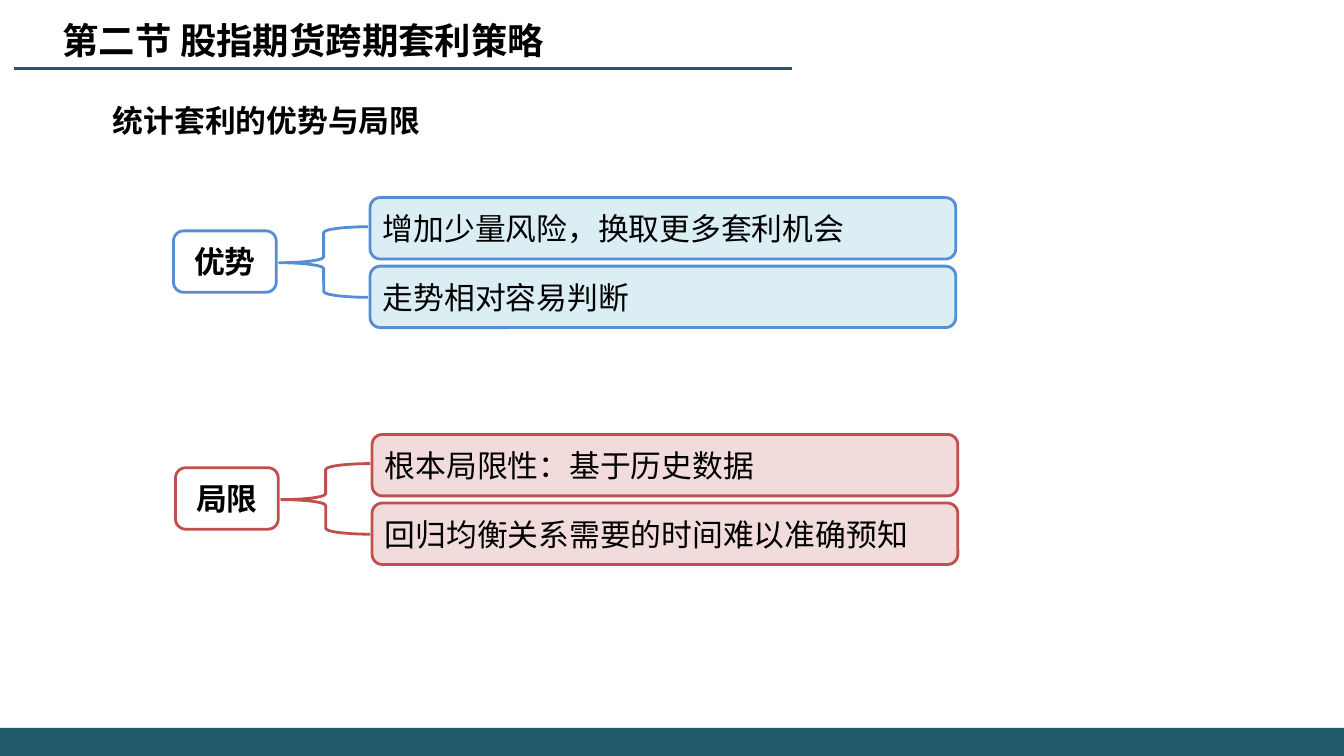
import pptx
import pptx.util
import pptx.dml.color
import pptx.oxml
import pptx.oxml.ns
import pptx.enum.shapes
import pptx.enum.text

Inches = pptx.util.Inches
Shape = pptx.enum.shapes.MSO_SHAPE
Align = pptx.enum.text.PP_ALIGN
Anchor = pptx.enum.text.MSO_ANCHOR

COLORS = {
    "teal": "215968", "black": "000000", "white": "FFFFFF",
    "blue": "558ED5", "pale_blue": "DBEEF4",
    "red": "C0504D", "pale_red": "F2DCDB",
}
CJK_FONT = "Noto Sans CJK SC"


def color(name):
    """Return the named palette colour."""
    return pptx.dml.color.RGBColor.from_string(COLORS[name])


def write(shape, text, size, font, bold=False, align=Align.LEFT, anchor=Anchor.MIDDLE):
    """Put one formatted paragraph into a shape and return it."""
    frame = shape.text_frame
    frame.text = text
    frame.word_wrap = True
    frame.auto_size = pptx.enum.text.MSO_AUTO_SIZE.NONE
    frame.vertical_anchor = anchor
    para = frame.paragraphs[0]
    para.alignment = align
    para.space_before = pptx.util.Pt(0)
    span = para.runs[0]
    span.font.size = pptx.util.Pt(size)
    span.font.name = font
    span.font.bold = bold
    span.font.color.rgb = color("black")
    east_asian = pptx.oxml.parse_xml(
        f'<a:ea {pptx.oxml.ns.nsdecls("a")} typeface="{CJK_FONT}"/>')
    span.font._element.find(pptx.oxml.ns.qn("a:latin")).addnext(east_asian)
    return para


def place(shape, left, top, width, height):
    """Move and size a placeholder, in inches."""
    shape.left, shape.top = Inches(left), Inches(top)
    shape.width, shape.height = Inches(width), Inches(height)


def add_box(page, kind, left, top, width, height, fill, line=None):
    """Add a filled preset shape with an optional outline."""
    box = page.shapes.add_shape(
        kind, Inches(left), Inches(top), Inches(width), Inches(height))
    box.shadow.inherit = False
    box.fill.solid()
    box.fill.fore_color.rgb = color(fill)
    if line:
        box.line.color.rgb = color(line)
        box.line.width = pptx.util.Pt(2)
    else:
        box.line.fill.background()
    return box


def add_frame(page):
    """Draw the footer band and the rule under the title."""
    add_box(page, Shape.RECTANGLE, 0, 7.22, 13.33, 0.28, "teal")
    rule = page.shapes.add_connector(
        pptx.enum.shapes.MSO_CONNECTOR.STRAIGHT,
        Inches(7.86), Inches(0.68), Inches(0.14), Inches(0.68))
    rule.line.color.rgb = color("teal")
    rule.line.width = pptx.util.Pt(1.5)
    rule._element.spPr.append(
        pptx.oxml.parse_xml(f'<a:effectLst {pptx.oxml.ns.nsdecls("a")}/>'))


def add_headings(page, title_text, subtitle_text):
    """Fill the title and body placeholders."""
    title, body = page.placeholders[0], page.placeholders[1]
    place(title, 0.52, 0.13, 5.77, 0.54)
    write(title, title_text, 26, CJK_FONT, bold=True, anchor=Anchor.TOP)
    place(body, 0.52, 0.74, 12.13, 0.7)
    para = write(body, subtitle_text, 22, "Times New Roman", bold=True, anchor=Anchor.TOP)
    para.line_spacing = 1.6
    properties = para._p.get_or_add_pPr()
    properties.set("marL", "0")
    properties.set("indent", str(Inches(0.5)))
    properties.append(pptx.oxml.parse_xml(f'<a:buNone {pptx.oxml.ns.nsdecls("a")}/>'))


def add_group(page, left, top, label, points, line, fill):
    """Draw a label, a brace and its stacked points from the top left corner."""
    height, pitch = 0.61, 0.68
    tag = add_box(page, Shape.ROUNDED_RECTANGLE, left, top + 0.33, 1.02, height, "white", line)
    write(tag, label, 22, "Calibri", bold=True, align=Align.CENTER)
    brace = add_box(page, Shape.LEFT_BRACE, left + 1.05, top + 0.29, 0.88, 0.7, "white", line)
    brace.adjustments[0], brace.adjustments[1] = 0.083, 0.51
    for row, point in enumerate(points):
        box = add_box(page, Shape.ROUNDED_RECTANGLE,
                      left + 1.95, top + row * pitch, 5.81, height, fill, line)
        write(box, point, 22, "Times New Roman")


def main():
    """Build and save the deck."""
    deck = pptx.Presentation()
    deck.slide_width, deck.slide_height = Inches(13.33), Inches(7.5)
    page = deck.slides.add_slide(deck.slide_layouts[1])
    add_frame(page)
    add_headings(page, "第二节 股指期货跨期套利策略", "统计套利的优势与局限")
    add_group(page, 1.72, 1.96, "优势",
              ["增加少量风险，换取更多套利机会", "走势相对容易判断"], "blue", "pale_blue")
    add_group(page, 1.74, 4.31, "局限",
              ["根本局限性：基于历史数据", "回归均衡关系需要的时间难以准确预知"], "red", "pale_red")
    deck.save("out.pptx")


if __name__ == "__main__":
    main()
